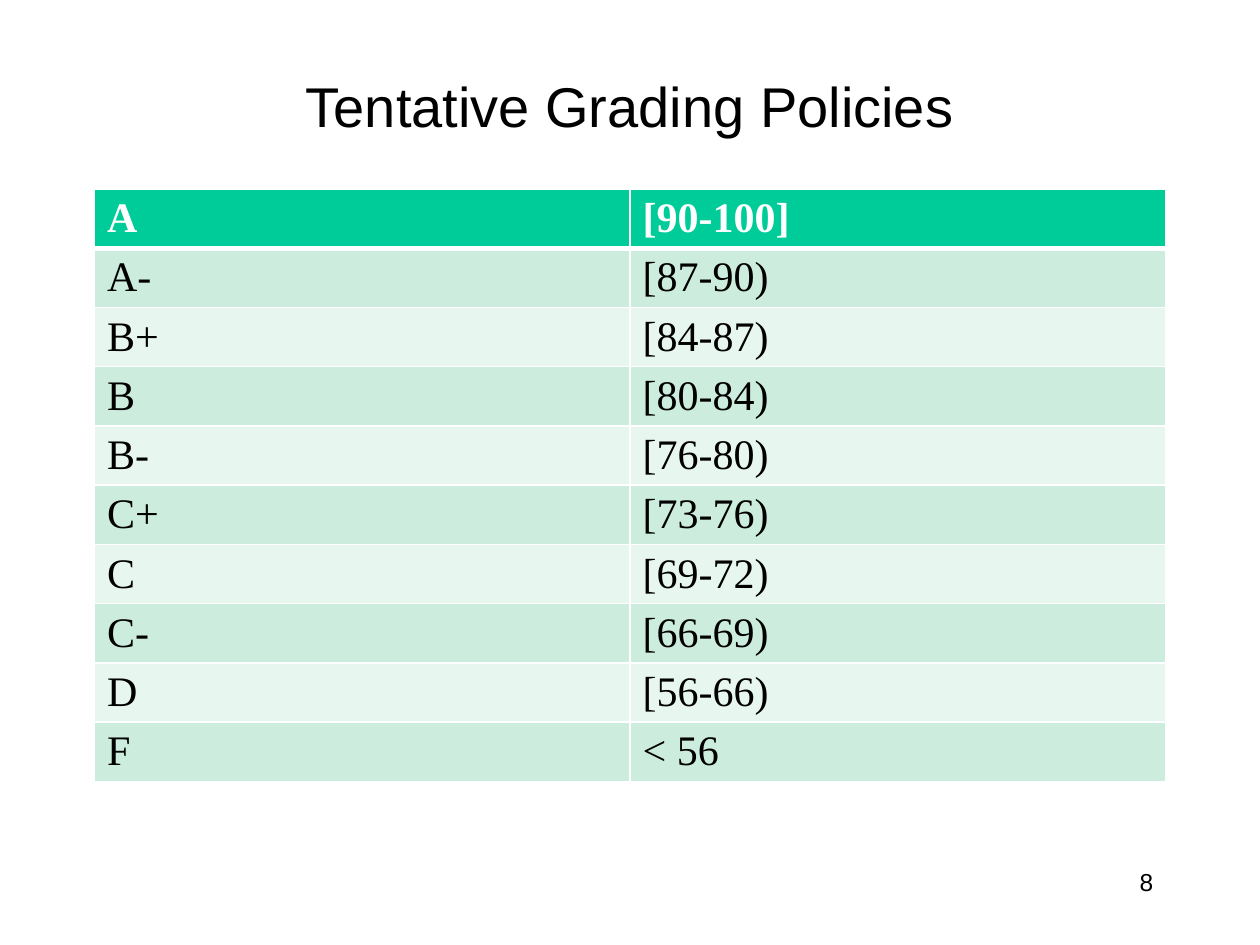
from lxml import etree
from pptx import Presentation
from pptx.dml.color import RGBColor
from pptx.enum.text import MSO_ANCHOR, PP_ALIGN
from pptx.oxml.ns import qn
from pptx.util import Inches, Pt

CENTER, RIGHT = PP_ALIGN.CENTER, PP_ALIGN.RIGHT
TOP, MIDDLE = MSO_ANCHOR.TOP, MSO_ANCHOR.MIDDLE

TITLE = "Tentative Grading Policies"
PAGE_NUMBER = "8"
GRADES = [
    ("A", "[90-100]"),
    ("A-", "[87-90)"),
    ("B+", "[84-87)"),
    ("B", "[80-84)"),
    ("B-", "[76-80)"),
    ("C+", "[73-76)"),
    ("C", "[69-72)"),
    ("C-", "[66-69)"),
    ("D", "[56-66)"),
    ("F", "< 56"),
]
COLORS = {
    "text": "000000",
    "white": "FFFFFF",
    "header": "00CC99",
    "odd_row": "CCECDE",
    "even_row": "E7F6EF",
}
LEFT, WIDTH = 0.75, 8.5
TABLE_TOP, ROW_HEIGHT = 1.5, 0.41
CELL_BOTTOM_MARGIN = 0.02


def add_span(para, text, size, font, color, bold=False):
    span = para.add_run()
    span.text = text
    span.font.size = Pt(size)
    span.font.name = font
    span.font.bold = bold
    span.font.color.rgb = RGBColor.from_string(COLORS[color])


def add_label(page, text, place, size, align, anchor):
    box = page.shapes.add_textbox(*[Inches(length) for length in place])
    frame = box.text_frame
    frame.word_wrap = True
    frame.vertical_anchor = anchor
    para = frame.paragraphs[0]
    para.alignment = align
    add_span(para, text, size, "Arial", "text")


def set_borders(cell, widths):
    properties = cell._tc.get_or_add_tcPr()
    for side, width in widths.items():
        line = etree.SubElement(properties, qn(f"a:ln{side}"), w=str(Pt(width)))
        fill = etree.SubElement(line, qn("a:solidFill"))
        etree.SubElement(fill, qn("a:srgbClr"), val=COLORS["white"])


def add_grade_table(page):
    row_count, column_count = len(GRADES), len(GRADES[0])
    table = page.shapes.add_table(
        row_count, column_count, Inches(LEFT), Inches(TABLE_TOP),
        Inches(WIDTH), Inches(ROW_HEIGHT * row_count),
    ).table
    for row, values in enumerate(GRADES):
        is_header = row == 0
        fill = "header" if is_header else "odd_row" if row % 2 else "even_row"
        borders = {
            "L": 1, "R": 1,
            "T": 3 if row == 1 else 1,
            "B": 3 if is_header else 1,
        }
        for column, value in enumerate(values):
            cell = table.cell(row, column)
            cell.margin_bottom = Inches(CELL_BOTTOM_MARGIN)
            set_borders(cell, borders)
            cell.fill.solid()
            cell.fill.fore_color.rgb = RGBColor.from_string(COLORS[fill])
            add_span(
                cell.text_frame.paragraphs[0], value, 24, "Times New Roman",
                "white" if is_header else "text", is_header,
            )


def main():
    deck = Presentation()
    deck.slide_width, deck.slide_height = Inches(10), Inches(7.5)
    page = deck.slides.add_slide(deck.slide_layouts[6])
    add_label(page, PAGE_NUMBER, (7.17, 6.83, 2.08, 0.5), 14, RIGHT, TOP)
    add_label(page, TITLE, (LEFT, 0.42, WIDTH, 0.83), 32, CENTER, MIDDLE)
    add_grade_table(page)
    deck.save("out.pptx")


if __name__ == "__main__":
    main()
